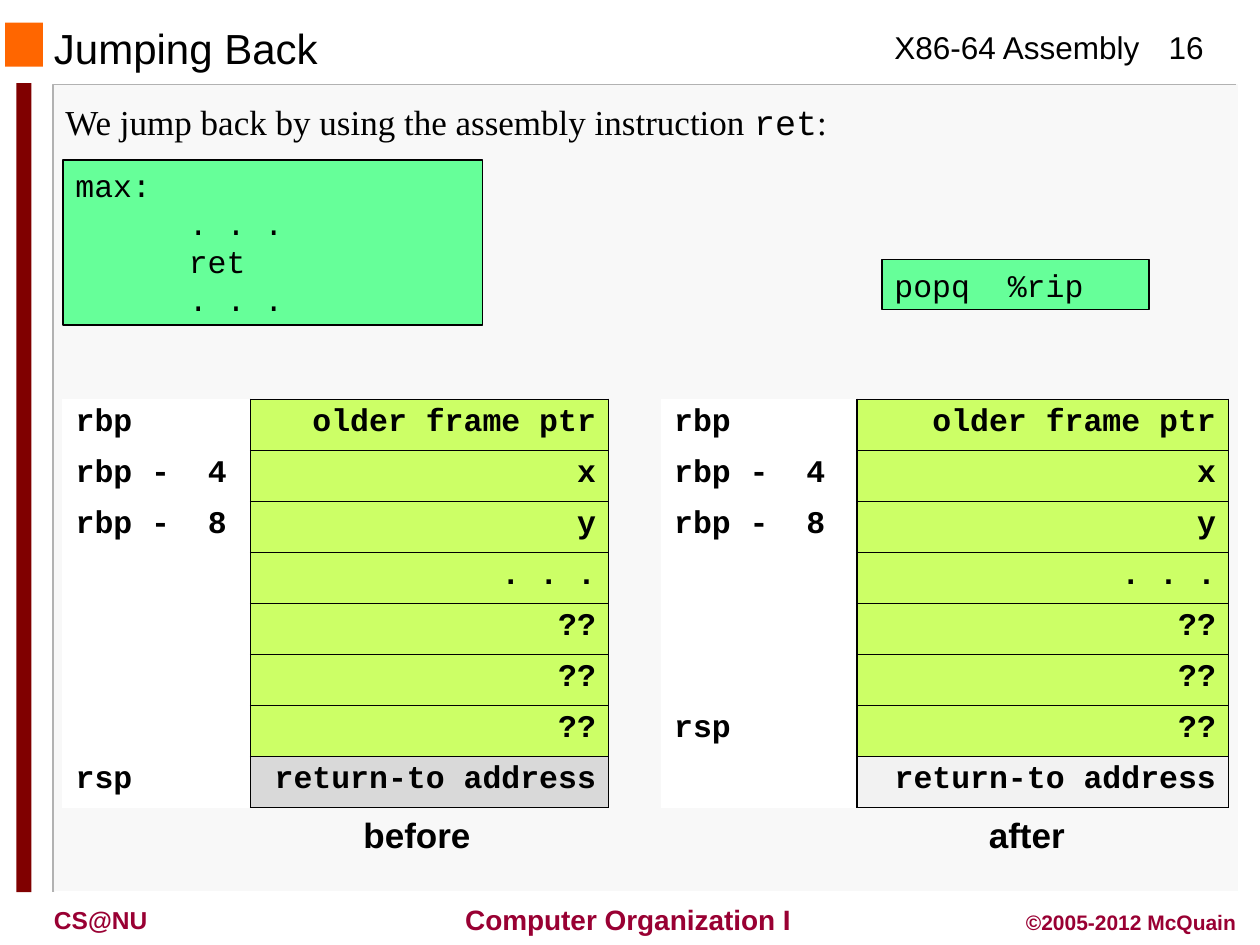
from dataclasses import dataclass

import lxml.etree
import pptx
import pptx.dml.color
import pptx.enum.shapes
import pptx.enum.text
import pptx.oxml.ns
import pptx.util

Inches = pptx.util.Inches
Pt = pptx.util.Pt
RGBColor = pptx.dml.color.RGBColor
Align = pptx.enum.text.PP_ALIGN
Anchor = pptx.enum.text.MSO_ANCHOR

BLACK = RGBColor(0x00, 0x00, 0x00)
WHITE = RGBColor(0xFF, 0xFF, 0xFF)
PANEL = RGBColor(0xF8, 0xF8, 0xF8)
PANEL_EDGE = RGBColor(0xB2, 0xB2, 0xB2)
ORANGE = RGBColor(0xFF, 0x66, 0x00)
MAROON = RGBColor(0x80, 0x00, 0x00)
CRIMSON = RGBColor(0x99, 0x00, 0x33)
CODE_GREEN = RGBColor(0x66, 0xFF, 0x99)
STACK_LIME = RGBColor(0xCC, 0xFF, 0x66)
RETURN_GREY = RGBColor(0xD9, 0xD9, 0xD9)
POPPED_GREY = RGBColor(0xF2, 0xF2, 0xF2)

SANS = "Arial"
SERIF = "Times New Roman"
MONO = "Courier New"

ROW_HEIGHT = 0.405
STACK_TOP = 3.17
CODE_INDENT = 0.9
STACK_VALUES = ["older frame ptr", "x", "y", ". . .", "??", "??", "??", "return-to address"]
FRAME_LABELS = {0: "rbp", 1: "rbp -  4", 2: "rbp -  8"}


@dataclass(frozen=True)
class Box:
    left: float
    top: float
    width: float
    height: float

    def lengths(self) -> tuple:
        return tuple(Inches(value) for value in (self.left, self.top, self.width, self.height))


@dataclass(frozen=True)
class Label:
    box: Box
    text: str
    size: int
    color: RGBColor = BLACK
    bold: bool = False
    align: Align = Align.LEFT
    anchor: Anchor = Anchor.TOP
    wrap: bool = True


@dataclass(frozen=True)
class Stack:
    left: float
    column_widths: tuple[float, float]
    rsp_row: int
    return_fill: RGBColor
    caption: str
    caption_left: float


LABELS = [
    Label(Box(7, 0.17, 2.17, 0.4), "X86-64 Assembly", 18, wrap=False),
    Label(Box(3.53, 7.11, 2.91, 0.37), "Computer Organization I", 16, CRIMSON, True,
          Align.CENTER, Anchor.MIDDLE, False),
    Label(Box(9.08, 0.17, 0.67, 0.4), "16", 18, align=Align.CENTER),
    Label(Box(0.33, 7.13, 1.5, 0.33), "CS@NU", 14, CRIMSON, True),
    Label(Box(7.83, 7.17, 2.08, 0.3), "©2005-2012 McQuain", 12, CRIMSON, True, Align.RIGHT),
    Label(Box(0.33, 0.19, 6.33, 0.38), "Jumping Back", 24, anchor=Anchor.MIDDLE),
]

STACKS = [
    Stack(0.5, (1.49, 2.84), 7, RETURN_GREY, "before", 2.33),
    Stack(5.25, (1.55, 2.95), 6, POPPED_GREY, "after", 7.17),
]


def write(paragraph, text: str, *, size: int = 18, font: str = MONO, color: RGBColor = BLACK,
          bold: bool = False, align: Align = Align.LEFT, indent: float = 0) -> None:
    paragraph.alignment = align
    if indent:
        properties = paragraph._p.get_or_add_pPr()
        properties.set("marL", str(Inches(indent)))
        properties.set("indent", "0")
    run = paragraph.add_run()
    run.text = text
    run.font.size = Pt(size)
    run.font.name = font
    run.font.bold = bold
    run.font.color.rgb = color


def add_text_frame(slide, box: Box, anchor: Anchor = Anchor.TOP, wrap: bool = True):
    frame = slide.shapes.add_textbox(*box.lengths()).text_frame
    frame.word_wrap = wrap
    frame.vertical_anchor = anchor
    return frame


def add_label(slide, label: Label) -> None:
    frame = add_text_frame(slide, label.box, label.anchor, label.wrap)
    write(frame.paragraphs[0], label.text, size=label.size, font=SANS, color=label.color,
          bold=label.bold, align=label.align)


def add_rectangle(slide, box: Box, fill: RGBColor):
    shape = slide.shapes.add_shape(pptx.enum.shapes.MSO_SHAPE.RECTANGLE, *box.lengths())
    shape.shadow.inherit = False
    shape.fill.solid()
    shape.fill.fore_color.rgb = fill
    shape.line.fill.background()
    return shape


def add_panel_edge(slide, points: list[tuple[float, float]], color: RGBColor) -> None:
    start, *rest = [(Inches(x), Inches(y)) for x, y in points]
    builder = slide.shapes.build_freeform(*start)
    builder.add_line_segments(rest, close=False)
    shape = builder.convert_to_shape()
    shape.shadow.inherit = False
    shape.fill.background()
    shape.line.color.rgb = color
    shape.line.width = Pt(1)


def add_code(slide, box: Box, lines: list[tuple[str, float]]) -> None:
    shape = add_rectangle(slide, box, CODE_GREEN)
    shape.line.color.rgb = BLACK
    shape.line.width = Pt(0.75)
    frame = shape.text_frame
    frame.word_wrap = True
    frame.vertical_anchor = Anchor.TOP
    for index, (text, indent) in enumerate(lines):
        paragraph = frame.add_paragraph() if index else frame.paragraphs[0]
        write(paragraph, text, indent=indent)


def add_cell_borders(cell, sides: tuple[str, ...]) -> None:
    properties = cell._tc.get_or_add_tcPr()
    qualified = pptx.oxml.ns.qn
    for position, side in enumerate(sides):
        line = lxml.etree.Element(qualified(f"a:{side}"), w=str(Pt(1)))
        fill = lxml.etree.SubElement(line, qualified("a:solidFill"))
        lxml.etree.SubElement(fill, qualified("a:srgbClr"), val=str(BLACK))
        properties.insert(position, line)


def fill_cell(cell, text: str, fill: RGBColor, align: Align, borders: tuple[str, ...]) -> None:
    cell.margin_left = cell.margin_right = Inches(0.1)
    cell.margin_top = cell.margin_bottom = Inches(0.05)
    cell.fill.solid()
    cell.fill.fore_color.rgb = fill
    if text:
        write(cell.text_frame.paragraphs[0], text, bold=True, align=align)
    add_cell_borders(cell, borders)


def add_stack(slide, stack: Stack) -> None:
    count = len(STACK_VALUES)
    box = Box(stack.left, STACK_TOP, sum(stack.column_widths), ROW_HEIGHT * count)
    table = slide.shapes.add_table(count, 2, *box.lengths()).table
    table.first_row = table.horz_banding = False
    for column, width in zip(table.columns, stack.column_widths):
        column.width = Inches(width)
    labels = {**FRAME_LABELS, stack.rsp_row: "rsp"}
    for row, value in enumerate(STACK_VALUES):
        value_fill = stack.return_fill if row == count - 1 else STACK_LIME
        fill_cell(table.cell(row, 0), labels.get(row, ""), WHITE, Align.LEFT, ("lnR",))
        fill_cell(table.cell(row, 1), value, value_fill, Align.RIGHT,
                  ("lnL", "lnR", "lnT", "lnB"))
    caption_box = Box(stack.caption_left, 6.41, 1.96, 0.44)
    add_label(slide, Label(caption_box, stack.caption, 20, bold=True, align=Align.CENTER))


def main() -> None:
    presentation = pptx.Presentation()
    presentation.slide_width = Inches(10)
    presentation.slide_height = Inches(7.5)
    slide = presentation.slides.add_slide(presentation.slide_layouts[6])

    add_rectangle(slide, Box(0.43, 0.67, 9.4, 6.41), PANEL)
    add_panel_edge(slide, [(9.81, 0.67), (0.42, 0.67), (0.42, 7.08)], PANEL_EDGE)
    add_panel_edge(slide, [(9.83, 0.67), (9.83, 7.08), (0.44, 7.08)], WHITE)
    add_rectangle(slide, Box(0.04, 0.18, 0.3, 0.35), ORANGE)
    add_rectangle(slide, Box(0.13, 0.66, 0.12, 6.42), MAROON)
    for label in LABELS:
        add_label(slide, label)

    sentence = add_text_frame(slide, Box(0.42, 0.75, 9.42, 0.44)).paragraphs[0]
    for text, font in [("We jump back by using the assembly instruction ", SERIF),
                       ("ret", MONO), (":", SERIF)]:
        write(sentence, text, size=20, font=font)

    add_code(slide, Box(0.5, 1.27, 3.33, 1.31),
             [("max:", 0), *((text, CODE_INDENT) for text in (". . .", "ret", ". . ."))])
    for stack in STACKS:
        add_stack(slide, stack)
    add_code(slide, Box(7, 2.06, 2.12, 0.4), [("popq  %rip", 0)])

    presentation.save("out.pptx")


if __name__ == "__main__":
    main()
